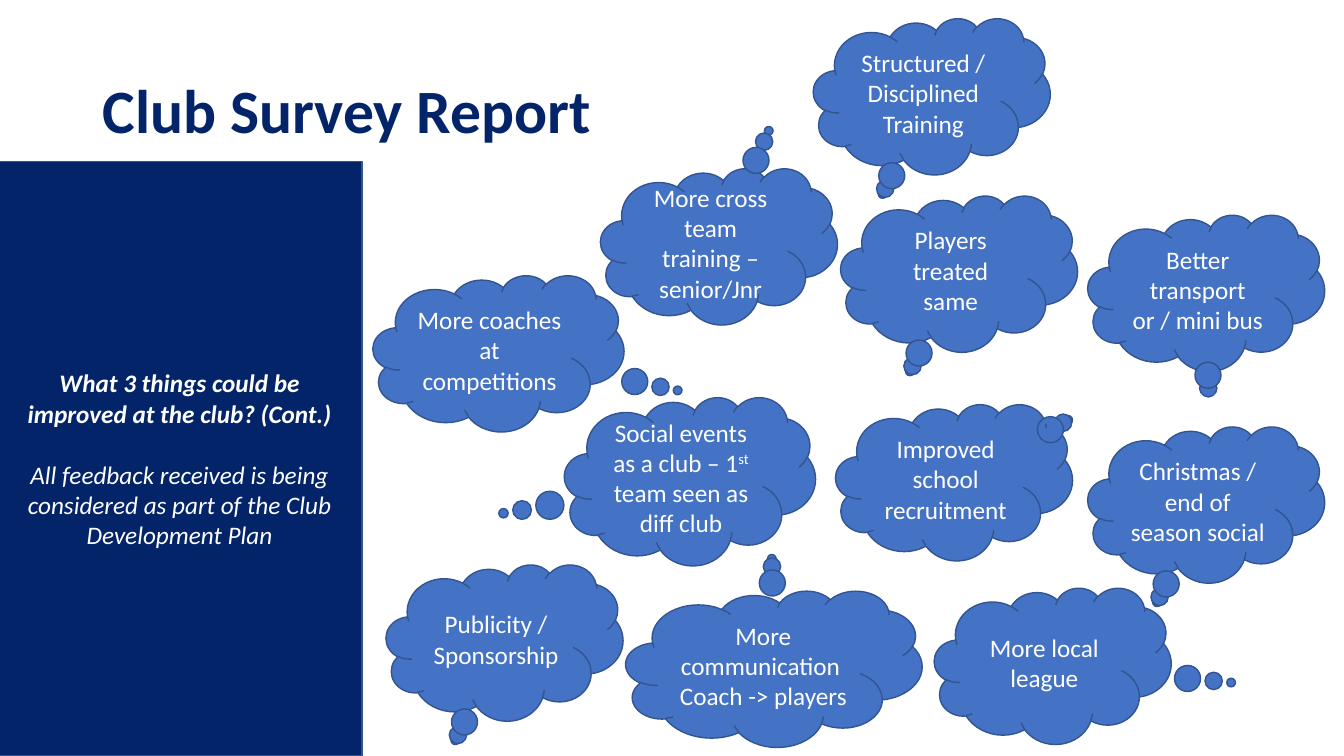
from pptx import Presentation
from pptx import util as u
from pptx.dml import color
from pptx.enum import shapes, text

NAVY, BLUE, EDGE, WHITE = "032469", "4472C4", "325491", "FFFFFF"


def rgb(value):
    return color.RGBColor.from_string(value)


def add_box(kind, left, top, width, height, fill, lines):
    shape = slide.shapes.add_shape(kind, u.Pt(left), u.Pt(top), u.Pt(width), u.Pt(height))
    shape.shadow.inherit = False
    shape.fill.solid()
    shape.fill.fore_color.rgb = rgb(fill)
    shape.line.color.rgb = rgb(EDGE)
    shape.line.width = u.Pt(1)
    frame = shape.text_frame
    frame.text = lines
    frame.word_wrap = True
    frame.vertical_anchor = text.MSO_ANCHOR.MIDDLE
    for paragraph in frame.paragraphs:
        paragraph.alignment = text.PP_ALIGN.CENTER
        for run in paragraph.runs:
            run.font.name = "Calibri"
            run.font.size = u.Pt(18)
            run.font.color.rgb = rgb(WHITE)
    return shape


presentation = Presentation()
presentation.slide_width = u.Pt(960)
presentation.slide_height = u.Pt(540)
slide = presentation.slides.add_slide(presentation.slide_layouts[5])

title = slide.shapes.title
title.left, title.top, title.width, title.height = u.Pt(66), u.Pt(28.75), u.Pt(828), u.Pt(104.4)
title.text_frame.text = "Club Survey Report"
title.text_frame.auto_size = text.MSO_AUTO_SIZE.NONE
title.text_frame.vertical_anchor = text.MSO_ANCHOR.MIDDLE
heading = title.text_frame.paragraphs[0]
heading.alignment = text.PP_ALIGN.LEFT
heading.line_spacing = 0.9
heading_font = heading.runs[0].font
heading_font.name = "Calibri"
heading_font.size = u.Pt(44)
heading_font.bold = True
heading_font.color.rgb = rgb(NAVY)

panel = add_box(
    shapes.MSO_SHAPE.RECTANGLE, -2, 115.2, 260.6, 424.8, NAVY,
    "What 3 things could be improved at the club? (Cont.)\n"
    "All feedback received is being considered as part of the Club Development Plan",
)
question, note = panel.text_frame.paragraphs
question.runs[0].font.bold = True
note.space_before = u.Pt(22)
for paragraph in (question, note):
    paragraph.runs[0].font.italic = True

WIDTH, WIDE, HEIGHT = 169.2, 179.3, 111.6
TAIL = (-0.208, 0.625)
clouds = [
    ("Structured / Disciplined Training", 581, 13, WIDTH, HEIGHT, TAIL),
    ("Better transport or / mini bus", 777, 153.4, WIDTH, HEIGHT, (0.009, 0.637)),
    ("Christmas / end of season social", 777, 304.6, WIDTH, HEIGHT, TAIL),
    ("Publicity / Sponsorship", 275.8, 403.2, WIDTH, HEIGHT, TAIL),
    ("More communication \nCoach -> players", 447, 421.9, 211.7, HEIGHT, (-0.007, -0.704)),
    ("Improved school recruitment", 596.9, 288.7, WIDTH, HEIGHT, (0.482, -0.399)),
    ("More coaches at competitions", 266.4, 196.6, WIDE, HEIGHT, (0.714, 0.237)),
    ("More cross team training – senior/Jnr", 429, 120.2, WIDTH, HEIGHT, (0.21, -0.74)),
    ("Players treated same", 600.5, 139.7, WIDTH, HEIGHT, TAIL),
    ("More local league", 667.4, 419.8, WIDTH, HEIGHT, (0.753, 0.107)),
    ("Social events as a club – 1", 403.2, 283.7, WIDE, 120.2, (-0.743, 0.19)),
]
for wording, left, top, width, height, tail in clouds:
    cloud = add_box(shapes.MSO_SHAPE.CLOUD_CALLOUT, left, top, width, height, BLUE, wording)
    cloud.adjustments[0], cloud.adjustments[1] = tail

social = cloud.text_frame.paragraphs[0]
for wording, baseline in (("st", "30000"), (" team seen as diff club", "0")):
    run = social.add_run()
    run.text = wording
    run.font.name = "Calibri"
    run.font.size = u.Pt(18)
    run.font.color.rgb = rgb(WHITE)
    run._r.get_or_add_rPr().set("baseline", baseline)

presentation.save("out.pptx")
